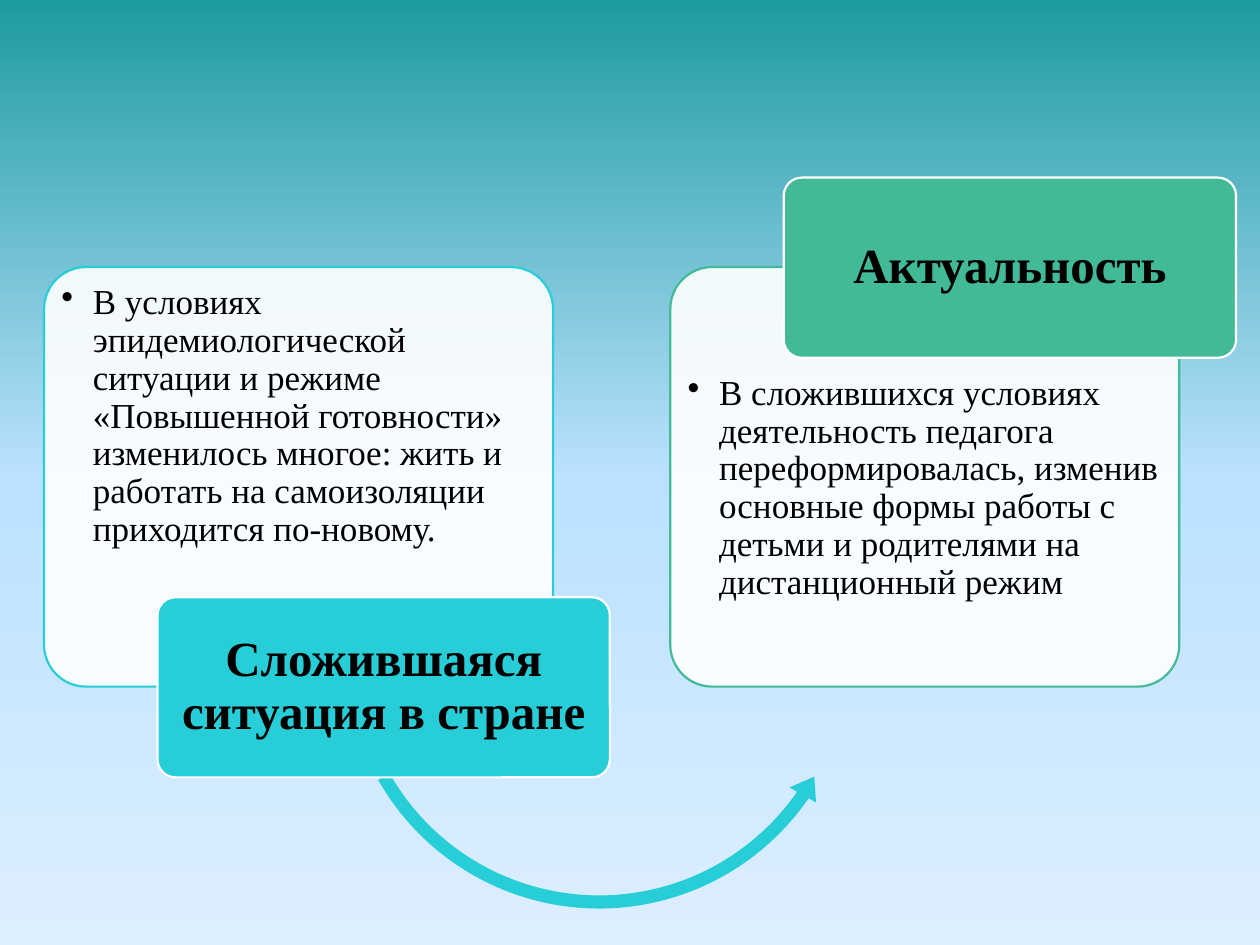
"""Builds a slide with two linked cards on the switch to remote teaching."""
from copy import deepcopy
from dataclasses import dataclass

from lxml import etree
from pptx import Presentation
from pptx.dml.color import RGBColor
from pptx.enum.shapes import MSO_SHAPE
from pptx.enum.text import MSO_ANCHOR, PP_ALIGN
from pptx.oxml.ns import qn
from pptx.util import Inches, Pt

ROUNDED = MSO_SHAPE.ROUNDED_RECTANGLE
CURVED_ARROW = MSO_SHAPE.LEFT_CIRCULAR_ARROW
TOP, MIDDLE = MSO_ANCHOR.TOP, MSO_ANCHOR.MIDDLE
CENTER = PP_ALIGN.CENTER

FONT = "Times New Roman"
COLORS = {
    "turquoise": "27CED7",
    "green": "42BA97",
    "white": "FFFFFF",
    "black": "000000",
}
BACKGROUND_STOPS = ((0, "1D9BA1"), (0.5, "BAE1FF"), (1, "DDEFFF"))

CARD_TOP, CARD_WIDTH, CARD_HEIGHT = 2.12, 4.04, 3.33
LABEL_WIDTH, LABEL_HEIGHT = 3.59, 1.43
LABEL_SHIFT = 0.9
CARD_INSET, LABEL_INSET = 0.04, 0.02
BULLET_INDENT = 0.25


@dataclass(frozen=True)
class Stage:
    """One card with its heading label."""
    left: float
    label_top: float
    text_top: float
    accent: str
    heading: str
    body: str


SITUATION = Stage(
    0.35, 4.74, CARD_TOP, "turquoise", "Сложившаяся ситуация в стране",
    "В условиях эпидемиологической ситуации и режиме «Повышенной готовности» "
    "изменилось многое: жить и работать на самоизоляции приходится по-новому.")
RELEVANCE = Stage(
    5.32, 1.41, 2.84, "green", "Актуальность",
    "В сложившихся условиях деятельность педагога переформировалась, изменив "
    "основные формы работы с детьми и родителями на дистанционный режим")


def color(name: str) -> RGBColor:
    """Look up a palette colour."""
    return RGBColor.from_string(COLORS[name])


def paint_background(slide) -> None:
    """Fill the slide with a vertical three-stop gradient."""
    fill = slide.background.fill
    fill.gradient()
    fill.gradient_angle = 270
    stop_list = slide._element.find(".//" + qn("a:gsLst"))
    stop_list.insert(1, deepcopy(stop_list[0]))
    for stop, (position, shade) in zip(fill.gradient_stops, BACKGROUND_STOPS):
        stop.position = position
        stop.color.rgb = RGBColor.from_string(shade)


def add_box(slide, left: float, top: float, width: float, height: float,
            fill: str, outline: str):
    """Draw an outlined rounded box."""
    box = slide.shapes.add_shape(
        ROUNDED, Inches(left), Inches(top), Inches(width), Inches(height))
    box.adjustments[0] = 0.1
    box.shadow.inherit = False
    box.fill.solid()
    box.fill.fore_color.rgb = color(fill)
    box.line.color.rgb = color(outline)
    box.line.width = Pt(1.25)
    return box


def write_text(box, text: str, size: int, inset: float, anchor, bold: bool):
    """Put one paragraph in a box and return it."""
    frame = box.text_frame
    frame.word_wrap = True
    frame.vertical_anchor = anchor
    frame.margin_left = frame.margin_right = Inches(inset)
    frame.margin_top = frame.margin_bottom = Inches(inset)
    paragraph = frame.paragraphs[0]
    paragraph.line_spacing = 0.9
    run = paragraph.add_run()
    run.text = text
    run.font.name = FONT
    run.font.size = Pt(size)
    run.font.bold = bold
    run.font.color.rgb = color("black")
    return paragraph


def add_card(slide, stage: Stage) -> None:
    """Draw a translucent card with its bulleted text."""
    card = add_box(slide, stage.left, CARD_TOP, CARD_WIDTH, CARD_HEIGHT,
                   "white", stage.accent)
    white = card._element.spPr.find(qn("a:solidFill"))[0]
    etree.SubElement(white, qn("a:alpha"), val="90000")
    body = write_text(card, stage.body, 20, CARD_INSET, TOP, False)
    card.text_frame.margin_top = Inches(CARD_INSET + stage.text_top - CARD_TOP)
    body.alignment = PP_ALIGN.LEFT
    body.level = 1
    properties = body._p.get_or_add_pPr()
    properties.set("marL", str(Inches(BULLET_INDENT)))
    properties.set("indent", str(-Inches(BULLET_INDENT)))
    etree.SubElement(properties, qn("a:buChar"), char="•")


def add_label(slide, stage: Stage) -> None:
    """Draw the heading label overlapping a card."""
    label = add_box(slide, stage.left + LABEL_SHIFT, stage.label_top,
                    LABEL_WIDTH, LABEL_HEIGHT, stage.accent, "white")
    heading = write_text(label, stage.heading, 28, LABEL_INSET, MIDDLE, True)
    heading.alignment = CENTER


def add_transition_arrow(slide) -> None:
    """Draw the curved arrow leading to the second card."""
    arrow = slide.shapes.add_shape(
        CURVED_ARROW, Inches(2.67), Inches(3.11), Inches(4.17), Inches(4.17))
    for index, value in enumerate((0.025, 3.003, 20.758, 90.245, 0.029)):
        arrow.adjustments[index] = value
    arrow.shadow.inherit = False
    arrow.fill.solid()
    arrow.fill.fore_color.rgb = color("turquoise")
    arrow.line.fill.background()


def main() -> None:
    """Build and save the presentation."""
    presentation = Presentation()
    presentation.slide_width = Inches(10)
    presentation.slide_height = Inches(7.5)
    slide = presentation.slides.add_slide(presentation.slide_layouts[6])
    paint_background(slide)
    add_card(slide, SITUATION)
    add_transition_arrow(slide)
    add_label(slide, SITUATION)
    add_card(slide, RELEVANCE)
    add_label(slide, RELEVANCE)
    presentation.save("out.pptx")


if __name__ == "__main__":
    main()
